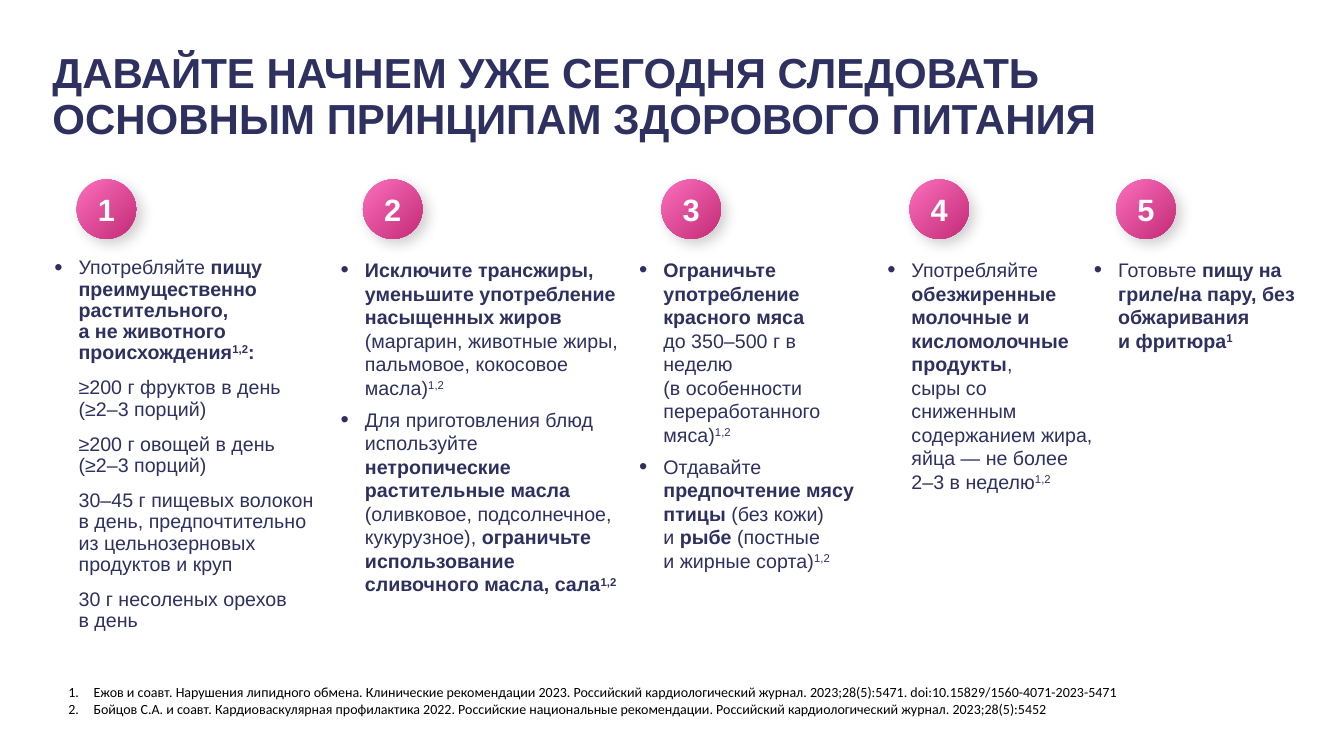
from lxml.etree import SubElement
from pptx import Presentation
from pptx.dml.color import RGBColor
from pptx.enum.shapes import MSO_SHAPE
from pptx.enum.text import MSO_ANCHOR, PP_ALIGN
from pptx.oxml.ns import qn
from pptx.util import Inches, Pt

COLORS = {
    "navy": "2E305F",
    "pink": "FB6FBB",
    "crimson": "C32B78",
    "white": "FFFFFF",
    "black": "000000",
}

TITLE = "ДАВАЙТЕ НАЧНЕМ УЖЕ СЕГОДНЯ СЛЕДОВАТЬ ОСНОВНЫМ ПРИНЦИПАМ ЗДОРОВОГО ПИТАНИЯ"
PLAIN, BOLD, SUPER, BOLD_SUPER = "", "b", "s", "bs"

PLANT_FOOD = [
    [("Употребляйте ", PLAIN),
     ("пищу преимущественно растительного,\nа не животного происхождения", BOLD),
     ("1,2", BOLD_SUPER), (":", BOLD)],
    [("≥200 г фруктов в день\n(≥2–3 порций)", PLAIN)],
    [("≥200 г овощей в день\n(≥2–3 порций)", PLAIN)],
    [("30–45 г пищевых волокон\nв день, предпочтительно из цельнозерновых продуктов и круп", PLAIN)],
    [("30 г несоленых орехов\nв день", PLAIN)],
]
FATS = [
    [("Исключите трансжиры, уменьшите употребление насыщенных жиров ", BOLD),
     ("(маргарин, животные жиры, пальмовое, кокосовое масла)", PLAIN), ("1,2", SUPER)],
    [("Для приготовления блюд используйте ", PLAIN),
     ("нетропические растительные масла ", BOLD),
     ("(оливковое, подсолнечное, кукурузное), ", PLAIN),
     ("ограничьте использование сливочного масла, сала", BOLD), ("1,2", BOLD_SUPER)],
]
MEAT = [
    [("Ограничьте употребление красного мяса", BOLD),
     ("\nдо 350–500 г в\nнеделю\n(в особенности переработанного мяса)", PLAIN), ("1,2", SUPER)],
    [("Отдавайте ", PLAIN), ("предпочтение мясу птицы ", BOLD),
     ("(без кожи)\nи ", PLAIN), ("рыбе", BOLD),
     (" (постные\nи жирные сорта)", PLAIN), ("1,2", SUPER)],
]
DAIRY = [
    [("Употребляйте ", PLAIN), ("обезжиренные молочные и кисломолочные продукты", BOLD),
     (",\nсыры со\nсниженным содержанием жира, яйца — не более 2–3 в неделю", PLAIN), ("1,2", SUPER)],
]
COOKING = [
    [("Готовьте ", PLAIN), ("пищу на гриле/на пару, без обжаривания\nи фритюра", BOLD),
     ("1", BOLD_SUPER)],
]
COLUMNS = [
    (0.54, 2.73, 3.77, PLANT_FOOD),
    (3.38, 2.84, 4.44, FATS),
    (6.34, 2.34, 3, MEAT),
    (8.8, 2.05, 2.76, DAIRY),
    (10.85, 2.49, 2.76, COOKING),
]
REFERENCES = [
    "Ежов и соавт. Нарушения липидного обмена. Клинические рекомендации 2023. "
    "Российский кардиологический журнал. 2023;28(5):5471. doi:10.15829/1560-4071-2023-5471",
    "Бойцов С.А. и соавт. Кардиоваскулярная профилактика 2022. Российские национальные "
    "рекомендации. Российский кардиологический журнал. 2023;28(5):5452",
]


def rgb(name):
    return RGBColor.from_string(COLORS[name])


def format_run(run, size, color, bold=False, font="Arial"):
    run.font.name = font
    run.font.size = Pt(size)
    run.font.bold = bold
    run.font.color.rgb = rgb(color)


def clear_margins(text_frame):
    text_frame.margin_left = text_frame.margin_right = 0
    text_frame.margin_top = text_frame.margin_bottom = 0


def set_indent(paragraph, left, first):
    properties = paragraph._p.get_or_add_pPr()
    properties.set("marL", str(Inches(left)))
    properties.set("indent", str(Inches(first)))
    return properties


def add_bullet(paragraph):
    properties = set_indent(paragraph, 0.24, -0.24)
    SubElement(properties, qn("a:buSzPct"), val="120000")
    SubElement(properties, qn("a:buFont"), typeface="Arial")
    SubElement(properties, qn("a:buChar"), char="•")


def add_segment(paragraph, text, style):
    for number, line in enumerate(text.split("\n")):
        if number:
            paragraph.add_line_break()
        if line:
            run = paragraph.add_run()
            run.text = line
            format_run(run, 14, "navy", BOLD in style)
            if SUPER in style:
                run._r.get_or_add_rPr().set("baseline", "30000")


def add_text_box(slide, left, top, width, height):
    shape = slide.shapes.add_textbox(Inches(left), Inches(top), Inches(width), Inches(height))
    shape.text_frame.word_wrap = True
    return shape.text_frame


def add_paragraphs(text_frame, count):
    return [text_frame.paragraphs[0]] + [text_frame.add_paragraph() for _ in range(count - 1)]


def add_title(slide):
    title = slide.shapes.title
    title.left, title.top = Inches(0.52), Inches(0.52)
    title.width, title.height = Inches(12.28), Inches(1.26)
    text_frame = title.text_frame
    clear_margins(text_frame)
    text_frame.word_wrap = True
    text_frame.vertical_anchor = MSO_ANCHOR.TOP
    text_frame.text = TITLE
    paragraph = text_frame.paragraphs[0]
    paragraph.alignment = PP_ALIGN.LEFT
    paragraph.line_spacing = 0.9
    format_run(paragraph.runs[0], 30, "navy", True)


def add_column(slide, left, width, height, content):
    text_frame = add_text_box(slide, left, 2.56, width, height)
    clear_margins(text_frame)
    is_list = content is PLANT_FOOD
    paragraphs = add_paragraphs(text_frame, len(content))
    for number, (paragraph, segments) in enumerate(zip(paragraphs, content)):
        if is_list and number:
            set_indent(paragraph, 0.24, 0)
        else:
            add_bullet(paragraph)
        if is_list:
            paragraph.line_spacing = 0.9
        if number:
            paragraph.space_before = Pt(10 if is_list else 6)
        for text, style in segments:
            add_segment(paragraph, text, style)


def add_badge(slide, left, number):
    badge = slide.shapes.add_shape(
        MSO_SHAPE.OVAL, Inches(left), Inches(1.78), Inches(0.59), Inches(0.59))
    badge.fill.gradient()
    badge.fill.gradient_angle = 315
    for stop, color, position in zip(badge.fill.gradient_stops, ("pink", "crimson"), (0, 1)):
        stop.color.rgb = rgb(color)
        stop.position = position
    badge.line.fill.background()
    badge.shadow.inherit = False
    effects = badge._element.spPr.find(qn("a:effectLst"))
    shadow = SubElement(effects, qn("a:outerShdw"), blurRad=str(Pt(10)), dist=str(Pt(5)),
                        dir="2700000", algn="tl", rotWithShape="0")
    color = SubElement(shadow, qn("a:srgbClr"), val=COLORS["black"])
    SubElement(color, qn("a:alpha"), val="20000")
    text_frame = badge.text_frame
    clear_margins(text_frame)
    text_frame.vertical_anchor = MSO_ANCHOR.MIDDLE
    text_frame.text = str(number)
    text_frame.paragraphs[0].alignment = PP_ALIGN.CENTER
    format_run(text_frame.paragraphs[0].runs[0], 22, "white", True)


def add_references(slide):
    text_frame = add_text_box(slide, 0.58, 6.73, 12.23, 0.61)
    for paragraph, reference in zip(add_paragraphs(text_frame, len(REFERENCES)), REFERENCES):
        properties = set_indent(paragraph, 0.25, -0.25)
        SubElement(properties, qn("a:buAutoNum"), type="arabicPeriod")
        paragraph.text = reference
        format_run(paragraph.runs[0], 10, "black", font="Calibri")


def main():
    presentation = Presentation()
    presentation.slide_width = Inches(13.33)
    presentation.slide_height = Inches(7.5)
    slide = presentation.slides.add_slide(presentation.slide_layouts[5])
    add_title(slide)
    for number, (left, width, height, content) in enumerate(COLUMNS, 1):
        add_column(slide, left, width, height, content)
        add_badge(slide, left + 0.22, number)
    add_references(slide)
    presentation.save("out.pptx")


if __name__ == "__main__":
    main()
